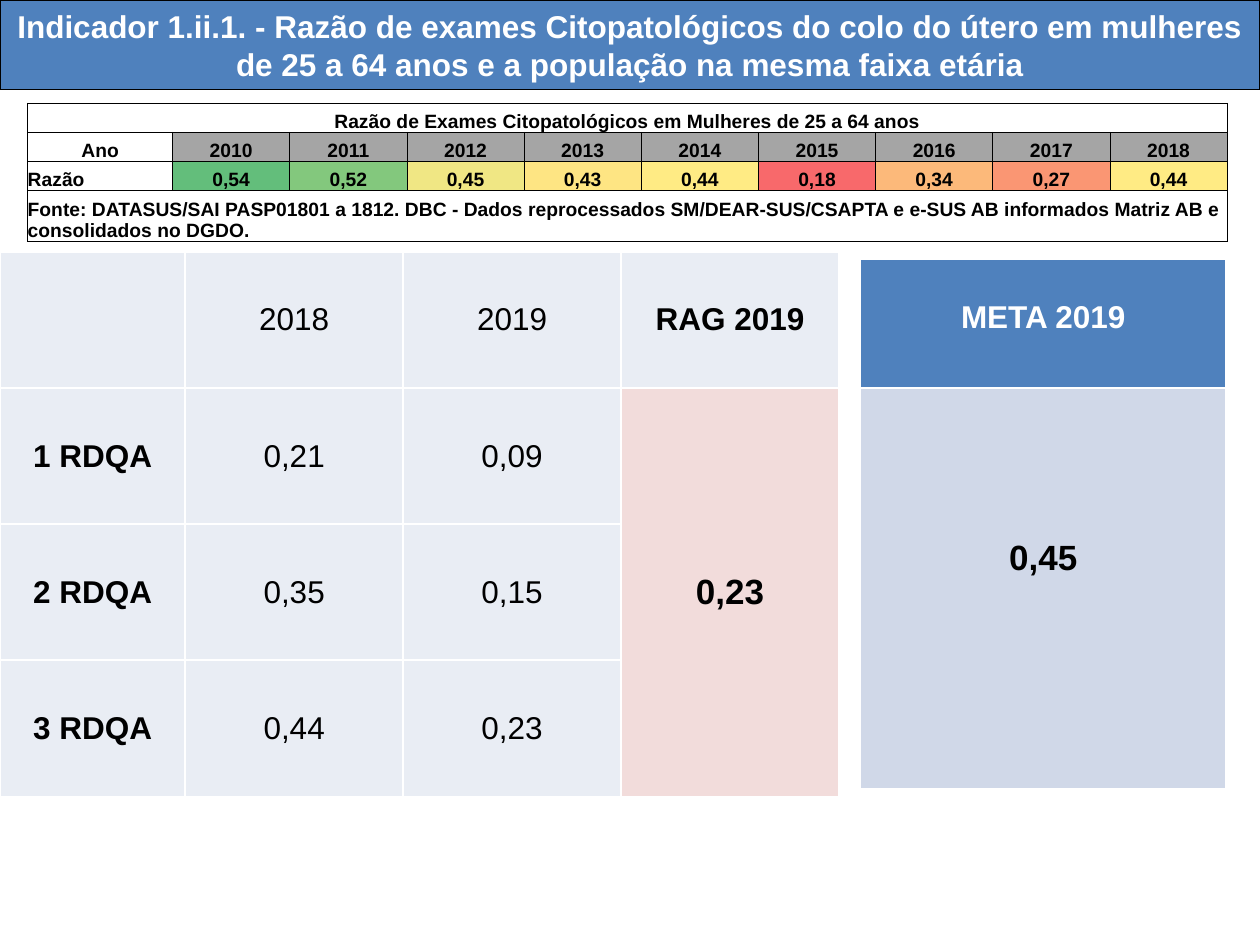
from lxml.etree import SubElement
from pptx import Presentation
from pptx.dml.color import RGBColor
from pptx.enum.text import MSO_ANCHOR, MSO_AUTO_SIZE, PP_ALIGN
from pptx.oxml.ns import qn
from pptx.util import Inches, Pt

BLUE, WHITE, BLACK = "4F81BD", "FFFFFF", "000000"
PALE, ROSE, GREY, ICE = "E9EDF4", "F2DCDB", "A5A5A5", "D0D8E8"


def rgb(code):
    return RGBColor.from_string(code)


def write(frame, text, size=18, color=BLACK, bold=False, align=PP_ALIGN.CENTER):
    para = frame.paragraphs[0]
    para.alignment = align
    run = para.add_run()
    run.text = text
    font = run.font
    font.name, font.size, font.bold = "Arial", Pt(size), bold
    font.color.rgb = rgb(color)


class Deck:
    def __init__(self):
        self.file = Presentation()
        self.file.slide_width, self.file.slide_height = Inches(10), Inches(7.5)
        self.slide = self.file.slides.add_slide(self.file.slide_layouts[5])

    def title(self, text, high):
        box = self.slide.shapes.title
        box.left = box.top = 0
        box.width, box.height = Inches(10), Inches(high)
        box.fill.solid()
        box.fill.fore_color.rgb = rgb(BLUE)
        box.line.color.rgb = rgb(BLACK)
        box.line.width = Pt(0.75)
        frame = box.text_frame
        frame.word_wrap = True
        frame.auto_size = MSO_AUTO_SIZE.NONE
        write(frame, text, color=WHITE, bold=True)

    def table(self, left, top, cols, rows, edge, width):
        shape = self.slide.shapes.add_table(
            len(rows), len(cols), Inches(left), Inches(top),
            Inches(sum(cols)), Inches(sum(rows)))
        grid = shape.table
        grid.first_row = grid.horz_banding = False
        for col, size in zip(grid.columns, cols):
            col.width = Inches(size)
        for row, size in zip(grid.rows, rows):
            row.height = Inches(size)
        for cell in grid.iter_cells():
            self.border(cell, edge, width)
        return grid

    def border(self, cell, color, width):
        props = cell._tc.get_or_add_tcPr()
        for side in ("a:lnL", "a:lnR", "a:lnT", "a:lnB"):
            line = SubElement(props, qn(side), w=str(Pt(width)))
            fill = SubElement(line, qn("a:solidFill"))
            SubElement(fill, qn("a:srgbClr"), val=color)

    def cell(self, cell, text, fill=None, anchor=MSO_ANCHOR.MIDDLE, drop=0, **style):
        cell.margin_left = cell.margin_right = cell.margin_bottom = 0
        cell.margin_top = Inches(drop)
        cell.vertical_anchor = anchor
        if fill:
            cell.fill.solid()
            cell.fill.fore_color.rgb = rgb(fill)
        else:
            cell.fill.background()
        if text:
            write(cell.text_frame, text, **style)


def main():
    deck = Deck()
    deck.title("Indicador 1.ii.1. - Razão de exames Citopatológicos do colo do útero "
               "em mulheres de 25 a 64 anos e a população na mesma faixa etária", 0.71)

    # Four-month results
    data = [("", "2018", "2019", "RAG 2019"),
            ("1 RDQA", "0,21", "0,09"),
            ("2 RDQA", "0,35", "0,15"),
            ("3 RDQA", "0,44", "0,23")]
    grid = deck.table(0, 2, [1.47] + [1.73] * 3, [1.08] * 4, WHITE, 1)
    for r, row in enumerate(data):
        for c, text in enumerate(row):
            deck.cell(grid.cell(r, c), text, PALE, bold=c in (0, 3))
    grid.cell(1, 3).merge(grid.cell(3, 3))
    deck.cell(grid.cell(1, 3), "0,23", ROSE, size=20, bold=True)

    # Yearly target
    grid = deck.table(6.83, 2.06, [2.9], [1.02, 3.18], WHITE, 1)
    deck.cell(grid.cell(0, 0), "META 2019", BLUE, MSO_ANCHOR.TOP, 0.32,
              color=WHITE, bold=True)
    deck.cell(grid.cell(1, 0), "0,45", ICE, MSO_ANCHOR.TOP, 1.2, size=20, bold=True)

    # History by year
    ratios = [("0,54", "63BE7B"), ("0,52", "83C87D"), ("0,45", "F0E784"),
              ("0,43", "FEE583"), ("0,44", "FFEB84"), ("0,18", "F8696B"),
              ("0,34", "FCB97A"), ("0,27", "FA9673"), ("0,44", "FFEB84")]
    grid = deck.table(0.22, 0.82, [1.15] + [0.93] * 9, [0.23] * 3 + [0.41], BLACK, 0.5)
    for r in (0, 3):
        grid.cell(r, 0).merge(grid.cell(r, 9))
    look = dict(anchor=MSO_ANCHOR.BOTTOM, size=11, bold=True)
    heads = [("Razão de Exames Citopatológicos em Mulheres de 25 a 64 anos", PP_ALIGN.CENTER),
             ("Ano", PP_ALIGN.CENTER),
             ("Razão", PP_ALIGN.LEFT),
             ("Fonte: DATASUS/SAI PASP01801 a 1812. DBC - Dados reprocessados "
              "SM/DEAR-SUS/CSAPTA e e-SUS AB informados Matriz AB e "
              "consolidados no DGDO.", PP_ALIGN.LEFT)]
    for r, (text, align) in enumerate(heads):
        deck.cell(grid.cell(r, 0), text, align=align, **look)
    for c, (ratio, fill) in enumerate(ratios, 1):
        deck.cell(grid.cell(1, c), str(2009 + c), GREY, **look)
        deck.cell(grid.cell(2, c), ratio, fill, **look)

    deck.file.save("out.pptx")


if __name__ == "__main__":
    main()
